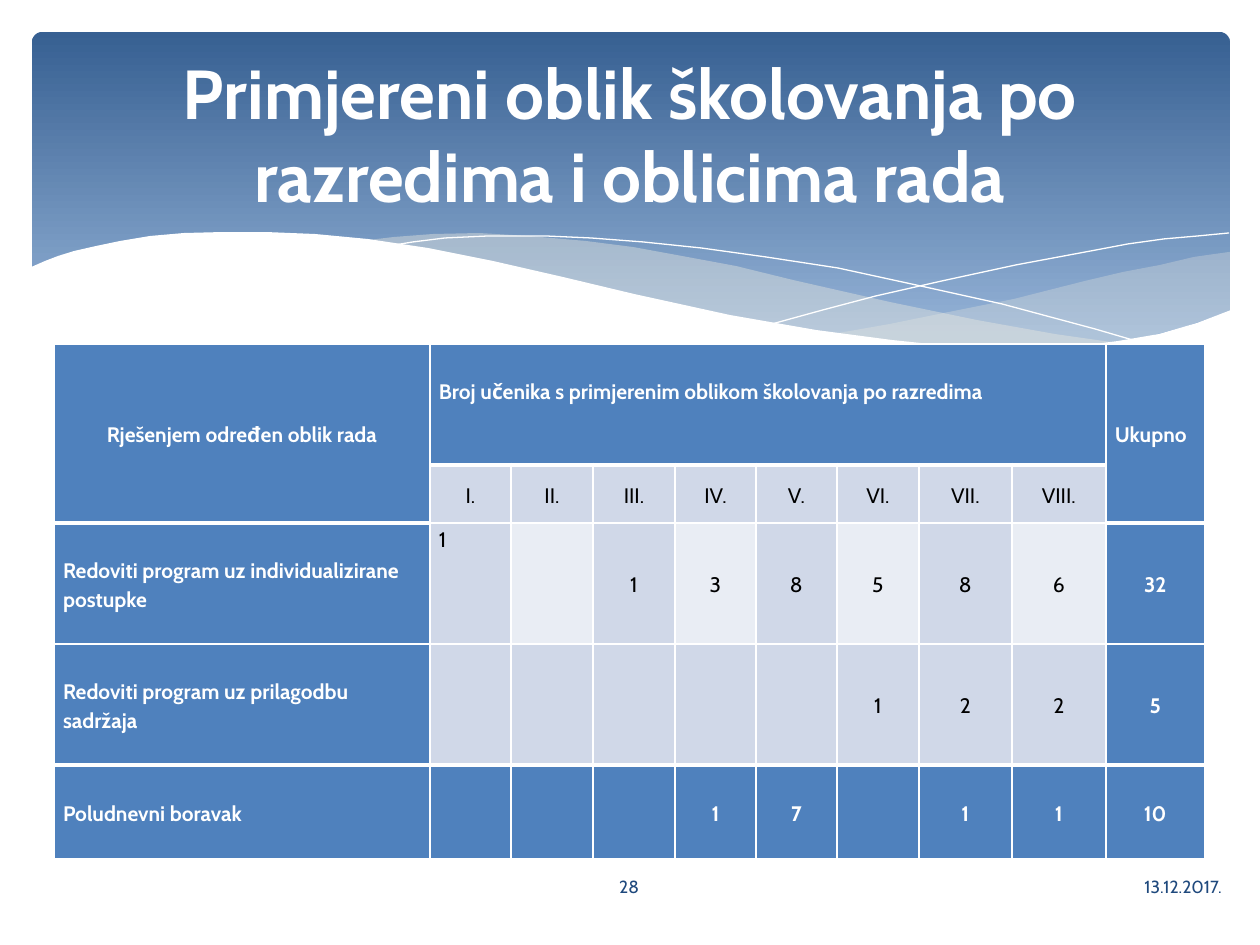
"""Build the slide on adapted schooling by grade and form of work."""
from lxml.etree import SubElement
from pptx import Presentation
from pptx.dml.color import RGBColor as RGB
from pptx.enum.shapes import MSO_SHAPE as SHAPE
from pptx.enum.text import MSO_ANCHOR as ANCHOR, MSO_AUTO_SIZE as AUTO, PP_ALIGN as ALIGN
from pptx.oxml.ns import qn
from pptx.util import Pt

PX = 914400 / 126
THEME = {
    "font": "Cabin", "title": 39.6, "cell": 12, "footer": 10,
    "white": "FFFFFF", "black": "000000", "navy": "1F497D", "accent": "4F81BD",
    "band": "D0D8E8", "light": "E9EDF4", "sand": "EEECE1",
    "sky_top": "376092", "sky_low": "95B3D7",
}


def px(*values):
    return [round(v * PX) for v in values]


def write(tf, text, size, color, align, bold=False, spacing=1.0):
    p = tf.paragraphs[0]
    r = p.add_run()
    r.text = text
    for name, value in {"alignment": align, "line_spacing": spacing}.items():
        setattr(p, name, value)
    for name, value in {"name": THEME["font"], "size": Pt(THEME[size]), "bold": bold}.items():
        setattr(r.font, name, value)
    r.font.color.rgb = RGB.from_string(THEME[color])


prs = Presentation()
prs.slide_width, prs.slide_height = px(1260, 945)
s = prs.slides.add_slide(prs.slide_layouts[5])

sky = s.shapes.add_shape(SHAPE.ROUNDED_RECTANGLE, *px(32, 32, 1198, 340))
sky.adjustments[0] = 0.03
sky.shadow.inherit = False
sky.line.fill.background()
sky.fill.gradient()
sky.fill.gradient_angle = 270
for stop, color, position in zip(sky.fill.gradient_stops, ("sky_top", "sky_low"), (0, 0.9)):
    stop.color.rgb = RGB.from_string(THEME[color])
    stop.position = position

right_wave = [
    (1229, 252), (1194, 257), (1160, 265), (1123, 272), (1085, 281), (1014, 299),
    (949, 312), (890, 324), (833, 334), (871, 339), (906, 343), (954, 348),
    (1012, 350), (1063, 349), (1110, 344), (1150, 336), (1187, 326), (1230, 311),
    (1230, 252),
]
middle_wave = [
    (1125, 344), (1055, 334), (977, 320), (890, 302), (793, 280), (736, 266),
    (682, 256), (633, 247), (586, 241), (529, 236), (479, 233), (433, 234),
    (394, 237), (360, 241), (407, 247), (456, 256), (509, 266), (566, 280),
    (668, 302), (757, 321), (819, 333), (876, 340), (942, 348), (1003, 350),
    (1056, 350), (1092, 348),
]
falling_line = [
    (389, 246), (413, 242), (445, 238), (488, 236), (546, 236), (591, 238),
    (643, 242), (701, 248), (766, 257), (838, 268), (916, 285), (1002, 304),
    (1095, 329), (1143, 343),
]
rising_line = [
    (772, 324), (823, 310), (876, 296), (942, 281), (1016, 265), (1091, 251),
    (1128, 244), (1164, 239), (1198, 236), (1229, 233),
]
white_wave = [
    (1231, 310), (1197, 323), (1159, 334), (1118, 341), (1071, 347), (1019, 349),
    (959, 347), (892, 340), (816, 330), (730, 315), (634, 294), (563, 277),
    (493, 261), (428, 248), (368, 239), (315, 234), (266, 232), (223, 232),
    (184, 233), (150, 236), (120, 241), (96, 246), (74, 251), (58, 256),
    (45, 261), (29, 268), (29, 415), (1231, 415),
]
waves = [
    (right_wave, "sand", 29), (middle_wave, "sand", 40),
    (falling_line, None, 100), (rising_line, None, 100), (white_wave, "white", 100),
]
for points, color, opacity in waves:
    builder = s.shapes.build_freeform(*points[0], scale=PX)
    builder.add_line_segments(points[1:], close=color is not None)
    sp = builder.convert_to_shape()
    sp.shadow.inherit = False
    if color is None:
        sp.fill.background()
        sp.line.color.rgb = RGB.from_string(THEME["white"])
        sp.line.width = Pt(0)
        continue
    sp.line.fill.background()
    sp.fill.solid()
    sp.fill.fore_color.rgb = RGB.from_string(THEME[color])
    if opacity < 100:
        srgb = sp.element.spPr.find(".//" + qn("a:srgbClr"))
        SubElement(srgb, qn("a:alpha"), val=str(opacity * 1000))

rows = [
    ["Rješenjem određen oblik rada", "Broj učenika s primjerenim oblikom školovanja po razredima",
     "", "", "", "", "", "", "", "Ukupno"],
    ["", "I.", "II.", "III.", "IV.", "V.", "VI.", "VII.", "VIII.", ""],
    ["Redoviti program uz individualizirane postupke", "1", "", "1", "3", "8", "5", "8", "6", "32"],
    ["Redoviti program uz prilagodbu sadržaja", "", "", "", "", "", "1", "2", "2", "5"],
    ["Poludnevni boravak", "", "", "", "1", "7", "", "1", "1", "10"],
]
widths = [376, 81, 82, 82, 81, 81, 82, 93, 94, 99]
heights = [121, 58, 121, 121, 94]
last_row, last_col = len(rows) - 1, len(widths) - 1
left_aligned = {(0, 1), (0, last_col), (2, 0), (2, 1), (3, 0), (4, 0)}

frame = s.shapes.add_table(len(rows), len(widths), *px(54, 344, sum(widths), sum(heights)))
table = frame.table
table.first_row = table.horz_banding = False
for column, width in zip(table.columns, px(*widths)):
    column.width = width
for row, height in zip(table.rows, px(*heights)):
    row.height = height
for first, last in [((0, 0), (1, 0)), ((0, 1), (0, 8)), ((0, 9), (1, 9))]:
    table.cell(*first).merge(table.cell(*last))

side, line_of_text = px(9, 29)
for i, texts in enumerate(rows):
    for j, text in enumerate(texts):
        cell = table.cell(i, j)
        if cell.is_spanned:
            continue
        edge = j in (0, last_col)
        strong = edge or i in (0, last_row)
        fmt = {
            "margin_left": side, "margin_right": side, "margin_top": 0,
            "margin_bottom": line_of_text if (i, j) == (0, 1) else 0,
            "vertical_anchor": ANCHOR.TOP if (i, j) == (2, 1) else ANCHOR.MIDDLE,
        }
        for name, value in fmt.items():
            setattr(cell, name, value)
        thick = {1, 2, last_row} if edge else {1, last_row}
        bottom = i + (cell.span_height if cell.is_merge_origin else 1)
        borders = {"lnL": 1, "lnR": 1, "lnT": 3 if i in thick else 1, "lnB": 3 if bottom in thick else 1}
        for tag, points in borders.items():
            ln = SubElement(cell._tc.get_or_add_tcPr(), qn("a:" + tag), w=str(Pt(points)))
            SubElement(SubElement(ln, qn("a:solidFill")), qn("a:srgbClr"), val=THEME["white"])
        fill = "accent" if strong else "light" if i == 2 and j % 2 == 0 else "band"
        cell.fill.solid()
        cell.fill.fore_color.rgb = RGB.from_string(THEME[fill])
        if text:
            align = ALIGN.LEFT if (i, j) in left_aligned else ALIGN.CENTER
            write(cell.text_frame, text, "cell", "white" if strong else "black", align, strong, 1.15)

footers = [
    ("13.12.2017.", (712, 862, 522, 50), ALIGN.RIGHT),
    ("28", (549, 862, 160, 50), ALIGN.CENTER),
]
for text, box, align in footers:
    tf = s.shapes.add_textbox(*px(*box)).text_frame
    tf.word_wrap = True
    tf.vertical_anchor = ANCHOR.MIDDLE
    write(tf, text, "footer", "navy", align)

title = s.shapes.title
title.left, title.top, title.width, title.height = px(63, 47, 1134, 173)
for name, value in {"word_wrap": True, "auto_size": AUTO.NONE, "vertical_anchor": ANCHOR.MIDDLE}.items():
    setattr(title.text_frame, name, value)
write(title.text_frame, "Primjereni oblik školovanja po razredima i oblicima rada",
      "title", "white", ALIGN.CENTER, True)
s.shapes.element.append(title.element)

prs.save("out.pptx")
